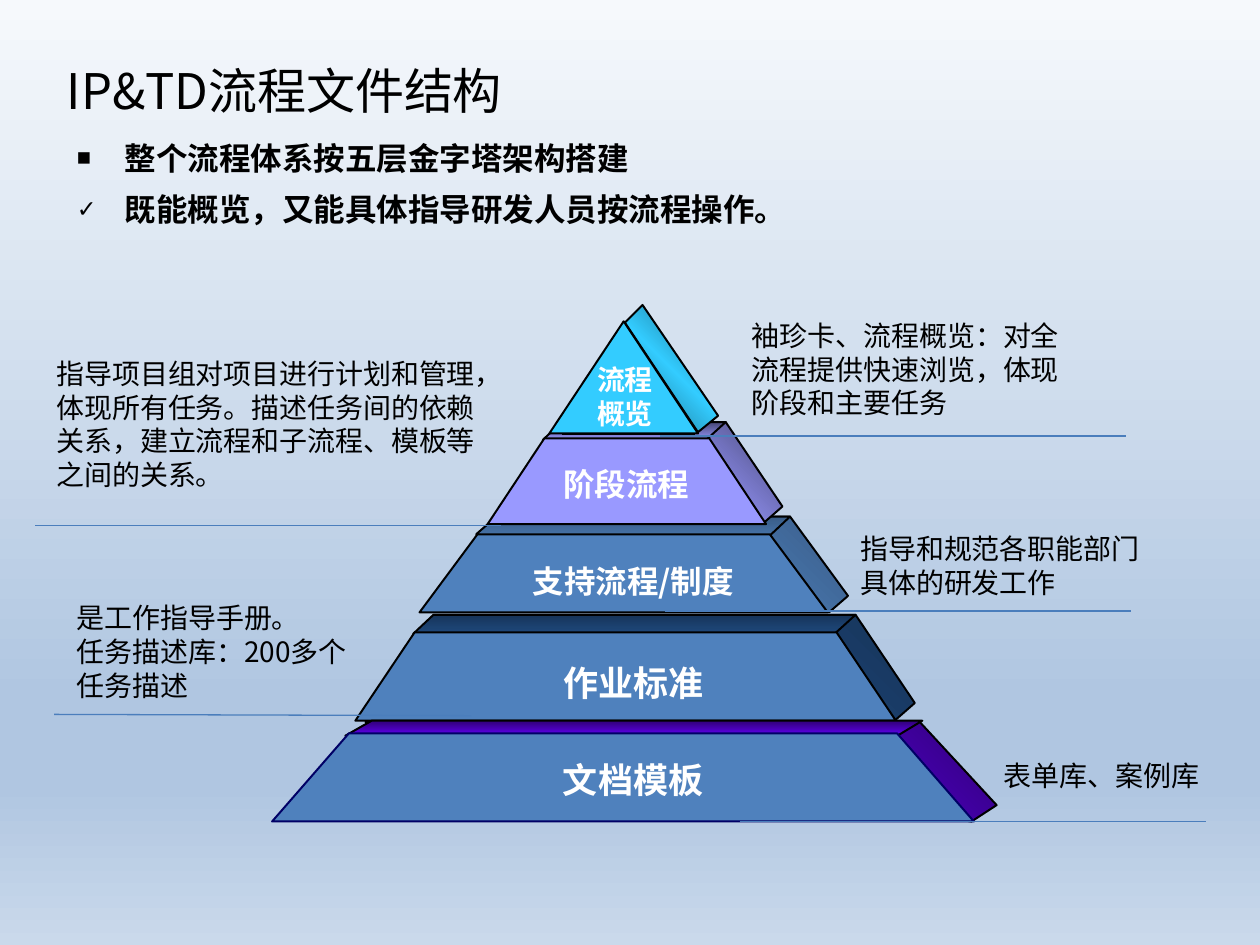
from dataclasses import dataclass

from lxml.etree import SubElement
from pptx import Presentation
from pptx.dml.color import RGBColor
from pptx.enum.shapes import MSO_CONNECTOR as Connector
from pptx.enum.text import MSO_ANCHOR as Anchor, MSO_AUTO_SIZE as AutoSize, PP_ALIGN as Align
from pptx.oxml.ns import qn
from pptx.util import Inches, Pt

FONT = "Noto Sans CJK SC"
BLACK = RGBColor(0x00, 0x00, 0x00)
WHITE = RGBColor(0xFF, 0xFF, 0xFF)
NAVY = RGBColor(0x00, 0x00, 0x66)
RULE_BLUE = RGBColor(0x4B, 0x7E, 0xBC)
BLUE = RGBColor(0x4F, 0x81, 0xBD)
BLUE_SHADE = RGBColor(0x39, 0x5C, 0x87)
DEEP = RGBColor(0x1F, 0x49, 0x7D)
DEEP_SHADE = RGBColor(0x16, 0x34, 0x59)
LILAC = RGBColor(0x99, 0x99, 0xFF)
LILAC_SHADE = RGBColor(0x47, 0x47, 0x76)
CYAN = RGBColor(0x33, 0xCC, 0xFF)
CYAN_SHADE = RGBColor(0x18, 0x5E, 0x76)
VIOLET = RGBColor(0x66, 0x00, 0xFF)
VIOLET_SHADE = RGBColor(0x2F, 0x00, 0x76)
SKY_TOP = RGBColor(0xF6, 0xF9, 0xFC)
SKY_MIDDLE = RGBColor(0xB0, 0xC6, 0xE1)
SKY_BOTTOM = RGBColor(0xCA, 0xD9, 0xEB)

Point = tuple[float, float]


@dataclass
class Tier:
    """One pyramid layer; each face lists its corners in inches."""
    side: list[Point]
    top: list[Point]
    front: list[Point]
    shade: RGBColor
    glow: RGBColor
    face: RGBColor
    outline: RGBColor = BLACK


@dataclass
class Label:
    text: str
    left: float
    top: float
    width: float
    height: float
    size: int = 16
    bold: bool = False
    color: RGBColor = BLACK


# Layers from back to front
TIERS = [
    Tier([(3.44, 4.88), (7.1, 5.72), (7.26, 5.58), (6.79, 4.88)],
         [(3.44, 4.88), (3.28, 5.03), (6.46, 5.18), (6.79, 4.88)],
         [(3.29, 5.02), (2.82, 5.72), (7.11, 5.72), (6.64, 5.02)],
         DEEP_SHADE, DEEP, BLUE),
    Tier([(3.94, 4.1), (6.58, 4.86), (6.73, 4.73), (6.27, 4.1)],
         [(3.94, 4.1), (3.78, 4.24), (5.74, 4.6), (6.27, 4.1)],
         [(3.79, 4.24), (3.33, 4.86), (6.57, 4.86), (6.11, 4.24)],
         BLUE_SHADE, BLUE, BLUE),
    Tier([(4.46, 3.35), (6.05, 4.16), (6.21, 4.02), (5.76, 3.35)],
         [(4.46, 3.35), (4.31, 3.49), (5.43, 3.65), (5.76, 3.35)],
         [(4.32, 3.48), (3.87, 4.16), (6.08, 4.16), (5.63, 3.48)],
         LILAC_SHADE, LILAC, LILAC),
    Tier([(5.1, 2.42), (4.96, 2.56), (5.54, 3.43), (5.7, 3.3)],
         [],
         [(4.95, 2.55), (4.36, 3.44), (5.54, 3.44)],
         CYAN_SHADE, CYAN, CYAN),
    Tier([(2.9, 5.73), (7.71, 6.52), (7.91, 6.39), (7.3, 5.73)],
         [(2.95, 5.72), (2.74, 5.84), (6.89, 5.98), (7.32, 5.72)],
         [(2.77, 5.82), (2.16, 6.52), (7.73, 6.52), (7.12, 5.82)],
         VIOLET_SHADE, VIOLET, BLUE, NAVY),
]

LABELS = [
    Label("流程概览", 4.64, 2.83, 0.86, 0.64, 16, True, WHITE),
    Label("阶段流程", 4.37, 3.64, 1.42, 0.4, 18, True, WHITE),
    Label("支持流程/制度", 4.13, 4.41, 2.2, 0.4, 18, True, WHITE),
    Label("作业标准", 4.37, 5.2, 1.42, 0.44, 20, True, WHITE),
    Label("文档模板", 4.37, 5.97, 1.73, 0.44, 20, True, WHITE),
    Label("袖珍卡、流程概览：对全流程提供快速浏览，体现阶段和主要任务", 5.87, 2.48, 2.83, 0.91),
    Label("指导项目组对项目进行计划和管理，体现所有任务。描述任务间的依赖关系，"
          "建立流程和子流程、模板等之间的关系。", 0.35, 2.78, 3.54, 1.18),
    Label("指导和规范各职能部门具体的研发工作", 6.73, 4.17, 2.49, 0.64),
    Label("是工作指导手册。\n任务描述库：200多个任务描述", 0.51, 4.72, 2.52, 0.91),
    Label("表单库、案例库", 7.87, 5.97, 2.13, 0.37),
]

RULES = [
    ((5.24, 3.46), (8.94, 3.46)),
    ((0.28, 4.17), (3.98, 4.17)),
    ((5.28, 4.85), (8.98, 4.85)),
    ((0.43, 5.67), (3.74, 5.68)),
    ((5.87, 6.52), (9.57, 6.52)),
]

BULLETS = [("■", "整个流程体系按五层金字塔架构搭建"),
           ("✓", "既能概览，又能具体指导研发人员按流程操作。")]


def paint_gradient(owner, fill, stops: list[tuple[int, RGBColor]], angle: int) -> None:
    """Fill with stops (percent, colour) at a clockwise angle."""
    fill.gradient()
    fill.gradient_angle = 360 - angle
    stop_list = next(owner.element.iter(qn("a:gsLst")))
    stop_list.clear()
    for percent, color in stops:
        stop = SubElement(stop_list, qn("a:gs"), pos=str(percent * 1000))
        SubElement(stop, qn("a:srgbClr"), val=str(color))


def style_text(paragraph, size: int, bold: bool = False, color: RGBColor = BLACK) -> None:
    font = paragraph.font
    font.name, font.size, font.bold = FONT, Pt(size), bold
    font.color.rgb = color
    for span in paragraph.runs:
        SubElement(span.font._element, qn("a:ea"), typeface=FONT)


def draw_face(page, points: list[Point], outline: RGBColor):
    corners = [(Inches(x), Inches(y)) for x, y in points]
    builder = page.shapes.build_freeform(*corners[0])
    builder.add_line_segments(corners[1:], close=True)
    face = builder.convert_to_shape()
    face.shadow.inherit = False
    face.line.color.rgb = outline
    face.line.width = Pt(1.13)
    return face


def draw_tier(page, tier: Tier) -> None:
    stops = [(0, tier.shade), (50, tier.glow), (100, tier.shade)]
    for points, angle in ((tier.side, 315), (tier.top, 90)):
        if points:
            face = draw_face(page, points, BLACK)
            paint_gradient(face, face.fill, stops, angle)
    front = draw_face(page, tier.front, tier.outline)
    front.fill.solid()
    front.fill.fore_color.rgb = tier.face


def draw_label(page, label: Label) -> None:
    box = page.shapes.add_textbox(*map(Inches, (label.left, label.top, label.width, label.height)))
    box.text_frame.word_wrap = True
    box.text_frame.text = label.text
    for paragraph in box.text_frame.paragraphs:
        style_text(paragraph, label.size, label.bold, label.color)


def draw_rule(page, start: Point, end: Point, color: RGBColor = RULE_BLUE) -> None:
    rule = page.shapes.add_connector(Connector.STRAIGHT, *map(Inches, start + end))
    rule.line.color.rgb = color
    rule.line.width = Pt(0.75)
    SubElement(rule.element.spPr, qn("a:effectLst"))


def place(shape, left: float, top: float, width: float, height: float) -> None:
    shape.left, shape.top, shape.width, shape.height = map(Inches, (left, top, width, height))
    shape.text_frame.auto_size = AutoSize.NONE


def fill_heading(page) -> None:
    title, body = page.placeholders
    place(title, 0.43, 0.28, 6.22, 0.87)
    title.text_frame.vertical_anchor = Anchor.MIDDLE
    title.text_frame.text = "IP&TD流程文件结构"
    title.text_frame.paragraphs[0].alignment = Align.LEFT
    style_text(title.text_frame.paragraphs[0], 28)

    place(body, 0.51, 0.99, 6.06, 0.87)
    body.text_frame.text = "\n".join(text for _, text in BULLETS)
    for paragraph, (mark, _) in zip(body.text_frame.paragraphs, BULLETS):
        properties = paragraph._p.get_or_add_pPr()
        properties.set("marL", str(Inches(0.38)))
        properties.set("indent", str(-Inches(0.38)))
        SubElement(properties, qn("a:buSzPct"), val="75000")
        SubElement(properties, qn("a:buChar"), char=mark)
        paragraph.line_spacing = 1.2
        paragraph.space_before = Pt(3.6)
        style_text(paragraph, 18, True)


def main() -> None:
    deck = Presentation()
    deck.slide_width, deck.slide_height = Inches(10), Inches(7.5)
    page = deck.slides.add_slide(deck.slide_layouts[1])
    paint_gradient(page, page.background.fill,
                   [(0, SKY_TOP), (74, SKY_MIDDLE), (83, SKY_MIDDLE), (100, SKY_BOTTOM)], 90)
    fill_heading(page)
    for tier in TIERS:
        draw_tier(page, tier)
    draw_rule(page, (4.46, 3.45), (5.52, 3.45), BLACK)
    for start, end in RULES:
        draw_rule(page, start, end)
    for label in LABELS:
        draw_label(page, label)
    deck.save("out.pptx")


if __name__ == "__main__":
    main()
